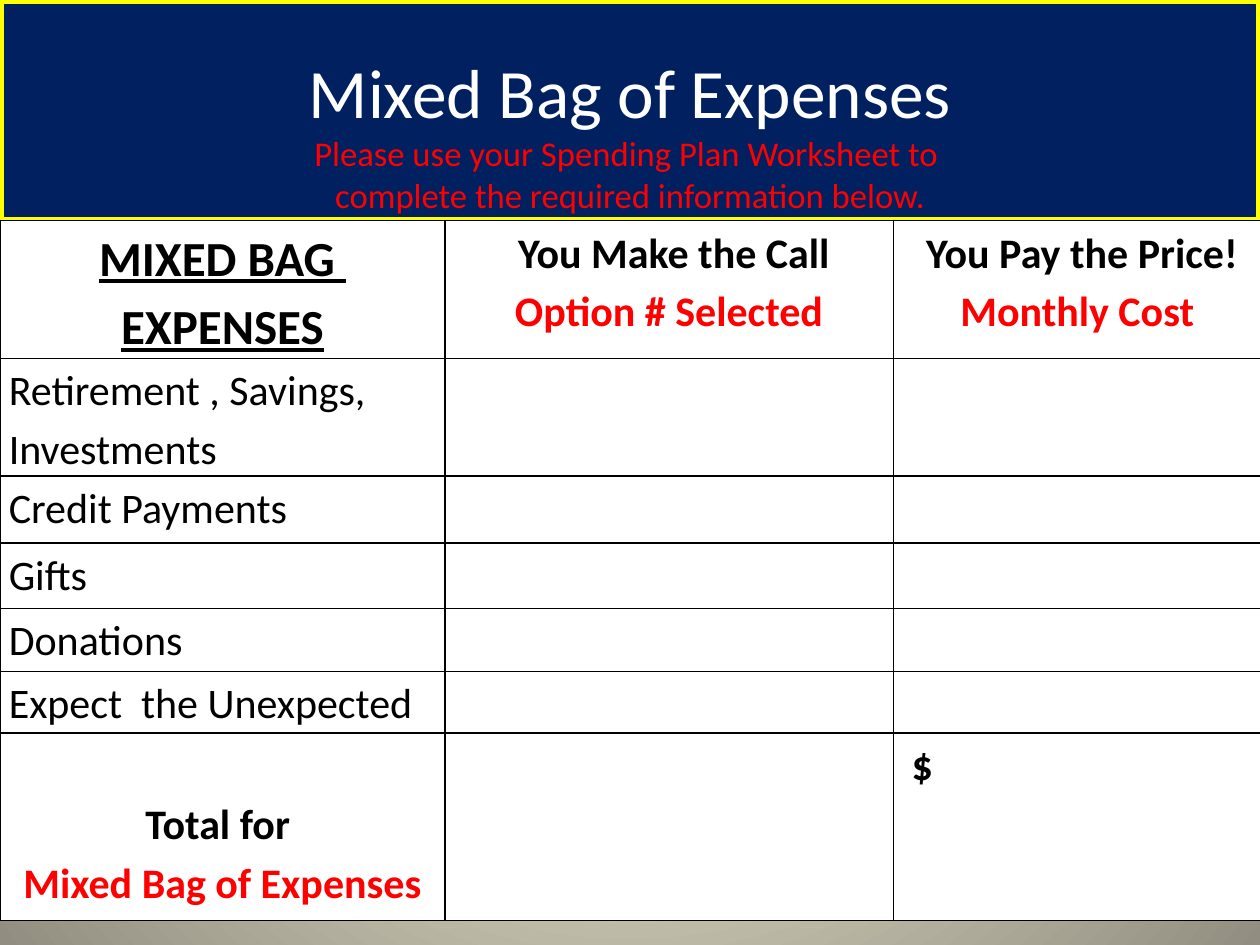
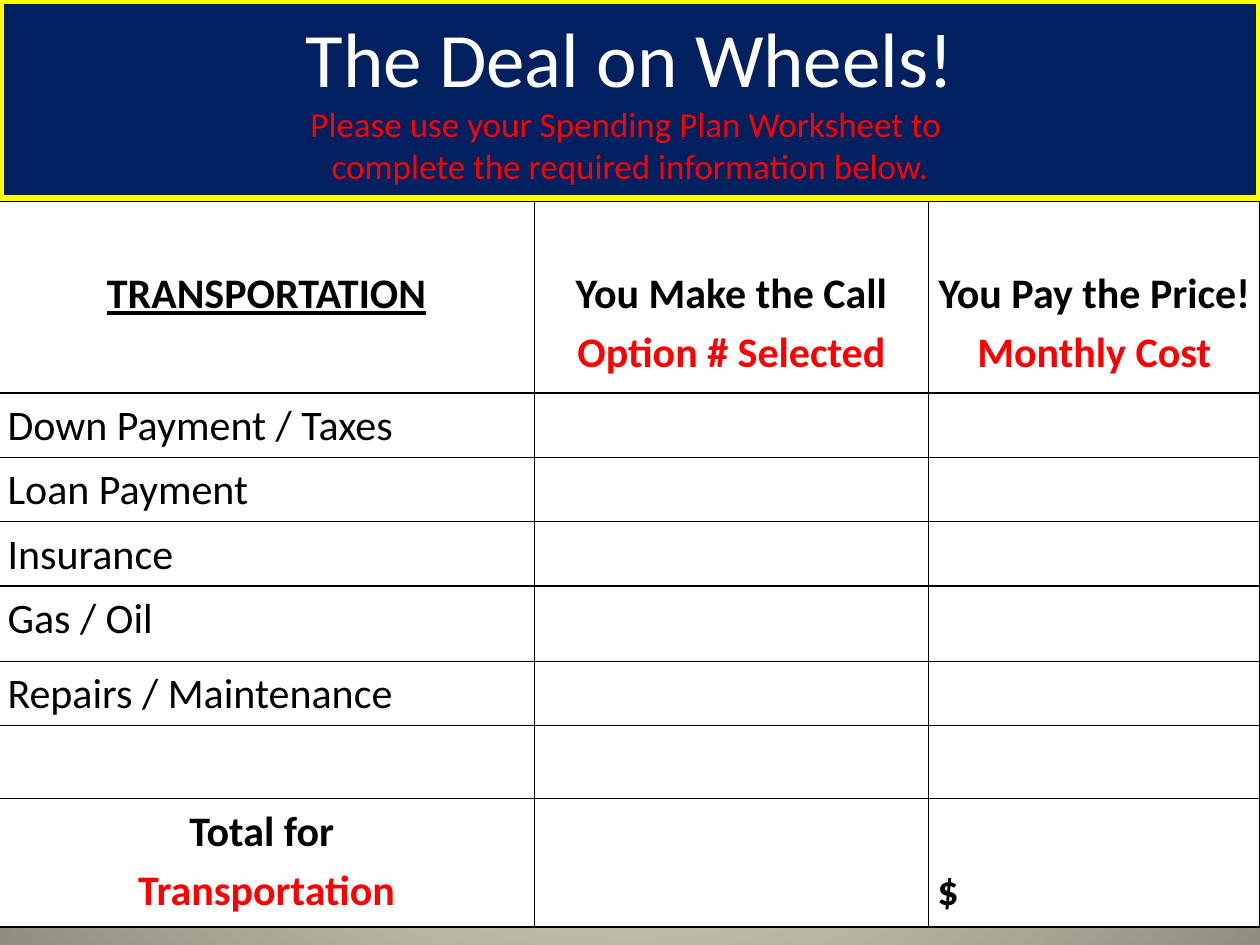
"""Build two spending-plan worksheet slides: a title band over a cost table."""
from lxml.etree import SubElement
from pptx import Presentation
from pptx.dml.color import RGBColor
from pptx.enum.shapes import MSO_SHAPE
from pptx.enum.text import MSO_ANCHOR, PP_ALIGN
from pptx.oxml import parse_xml
from pptx.oxml.ns import nsdecls, qn
from pptx.util import Inches, Pt

NAVY = RGBColor(0x00, 0x20, 0x60)
YELLOW = RGBColor(0xFF, 0xFF, 0x00)
RED = RGBColor(0xFF, 0x00, 0x00)
WHITE = RGBColor(0xFF, 0xFF, 0xFF)
BLACK = RGBColor(0x00, 0x00, 0x00)
CREAM = RGBColor(0xFC, 0xF7, 0xDD)
STONE = RGBColor(0x91, 0x8E, 0x81)
FONT = "Calibri"
WIDTH, HEIGHT = 10, 7.5
BODY_SIZE = 24
LINE_SPACING = 1.15
BLANK_LINE = 0.47

PROMPT = ["Please use your Spending Plan Worksheet to ",
          "complete the required information below."]
CALL = ["You Make the Call", "Option # Selected"]
PRICE = ["You Pay the Price!", "Monthly Cost"]

SLIDES = [
    dict(title="Mixed Bag of Expenses", title_size=39.6, prompt_size=19.8,
         band=1.75, text_top=0.39, left=0, top=1.75,
         cols=[3.53, 3.56, 2.92],
         rows=[1.08, 0.88, 0.53, 0.52, 0.5, 0.49, 1.49],
         heading=["MIXED BAG ", "EXPENSES"], heading_size=28,
         call=[" " + CALL[0], CALL[1]], price=[" " + PRICE[0], PRICE[1]],
         header_drop=0,
         items=["Retirement , Savings, Investments", "Credit Payments",
                "Gifts", "Donations", "Expect  the Unexpected"],
         total=["Total for ", "Mixed Bag of Expenses"], total_drop=BLANK_LINE,
         sum=" $", sum_drop=0),
    dict(title="The Deal on Wheels!", title_size=44, prompt_size=20,
         band=1.58, text_top=0.08, left=-0.01, top=1.6,
         cols=[4.25, 3.13, 2.63],
         rows=[1.52, 0.51, 0.51, 0.51, 0.6, 0.51, 0.58, 1.02],
         heading=["TRANSPORTATION"], heading_size=BODY_SIZE,
         call=CALL, price=PRICE, header_drop=BLANK_LINE,
         items=["Down Payment / Taxes", "Loan Payment", "Insurance",
                "Gas / Oil", "Repairs / Maintenance", ""],
         total=["Total for ", "Transportation"], total_drop=0,
         sum="$", sum_drop=BLANK_LINE),
]


def add_run(p, text, size, color, bold=False, underline=False):
    r = p.add_run()
    r.text = text
    f = r.font
    f.name, f.size, f.bold, f.underline = FONT, Pt(size), bold, underline
    f.color.rgb = color


def set_background(slide):
    stops = "".join(f'<a:gs pos="{pos}"><a:srgbClr val="{color}"/></a:gs>'
                    for pos, color in ((0, CREAM), (100000, STONE)))
    bg = parse_xml(
        f'<p:bg {nsdecls("p", "a")}><p:bgPr><a:gradFill><a:gsLst>{stops}</a:gsLst>'
        '<a:path path="circle"><a:fillToRect l="50000" t="50000" r="50000" b="50000"/>'
        '</a:path></a:gradFill><a:effectLst/></p:bgPr></p:bg>')
    slide.element.cSld.insert(0, bg)


def add_band(slide, page):
    sp = slide.shapes.add_shape(MSO_SHAPE.RECTANGLE, 0, 0,
                                Inches(WIDTH), Inches(page["band"]))
    sp.shadow.inherit = False
    sp.fill.solid()
    sp.fill.fore_color.rgb = NAVY
    sp.line.color.rgb = YELLOW
    sp.line.width = Pt(4.5)
    tf = sp.text_frame
    tf.word_wrap = True
    tf.vertical_anchor = MSO_ANCHOR.TOP
    tf.margin_top, tf.margin_bottom = Inches(page["text_top"]), 0
    p = tf.paragraphs[0]
    p.alignment = PP_ALIGN.CENTER
    add_run(p, page["title"], page["title_size"], WHITE)
    for line in PROMPT:
        p.add_line_break()
        add_run(p, line, page["prompt_size"], RED)


def style_cell(cell):
    tc_pr = cell._tc.get_or_add_tcPr()
    for side in ("a:lnL", "a:lnR", "a:lnT", "a:lnB"):
        ln = SubElement(tc_pr, qn(side), w=str(Pt(1)))
        fill = SubElement(ln, qn("a:solidFill"))
        SubElement(fill, qn("a:srgbClr"), val=str(BLACK))
    cell.fill.solid()
    cell.fill.fore_color.rgb = WHITE


def write_cell(cell, lines, colors=(BLACK, BLACK), size=BODY_SIZE, drop=0,
               align=PP_ALIGN.CENTER, bold=True, underline=False):
    cell.margin_left = cell.margin_right = Inches(0.07)
    cell.margin_top, cell.margin_bottom = Inches(drop), 0
    tf = cell.text_frame
    for i, (line, color) in enumerate(zip(lines, colors)):
        p = tf.add_paragraph() if i else tf.paragraphs[0]
        p.alignment = align
        p.line_spacing = LINE_SPACING
        add_run(p, line, size, color, bold, underline)


def add_cost_table(slide, page):
    cols, rows = page["cols"], page["rows"]
    table = slide.shapes.add_table(
        len(rows), len(cols), Inches(page["left"]), Inches(page["top"]),
        Inches(sum(cols)), Inches(sum(rows))).table
    table.first_row = table.horz_banding = False
    for col, width in zip(table.columns, cols):
        col.width = Inches(width)
    for row, height in zip(table.rows, rows):
        row.height = Inches(height)
    for cell in table.iter_cells():
        style_cell(cell)

    drop, last = page["header_drop"], len(rows) - 1
    write_cell(table.cell(0, 0), page["heading"], size=page["heading_size"],
               drop=drop, underline=True)
    for c, key in enumerate(("call", "price"), 1):
        write_cell(table.cell(0, c), page[key], (BLACK, RED), drop=drop)
    for r, item in enumerate(page["items"], 1):
        if item:
            write_cell(table.cell(r, 0), [item], align=PP_ALIGN.LEFT, bold=False)
    write_cell(table.cell(last, 0), page["total"], (BLACK, RED),
               drop=page["total_drop"])
    write_cell(table.cell(last, 2), [page["sum"]], drop=page["sum_drop"],
               align=PP_ALIGN.LEFT)


def main():
    prs = Presentation()
    prs.slide_width, prs.slide_height = Inches(WIDTH), Inches(HEIGHT)
    for page in SLIDES:
        slide = prs.slides.add_slide(prs.slide_layouts[6])
        set_background(slide)
        add_band(slide, page)
        add_cost_table(slide, page)
    prs.save("out.pptx")


if __name__ == "__main__":
    main()
